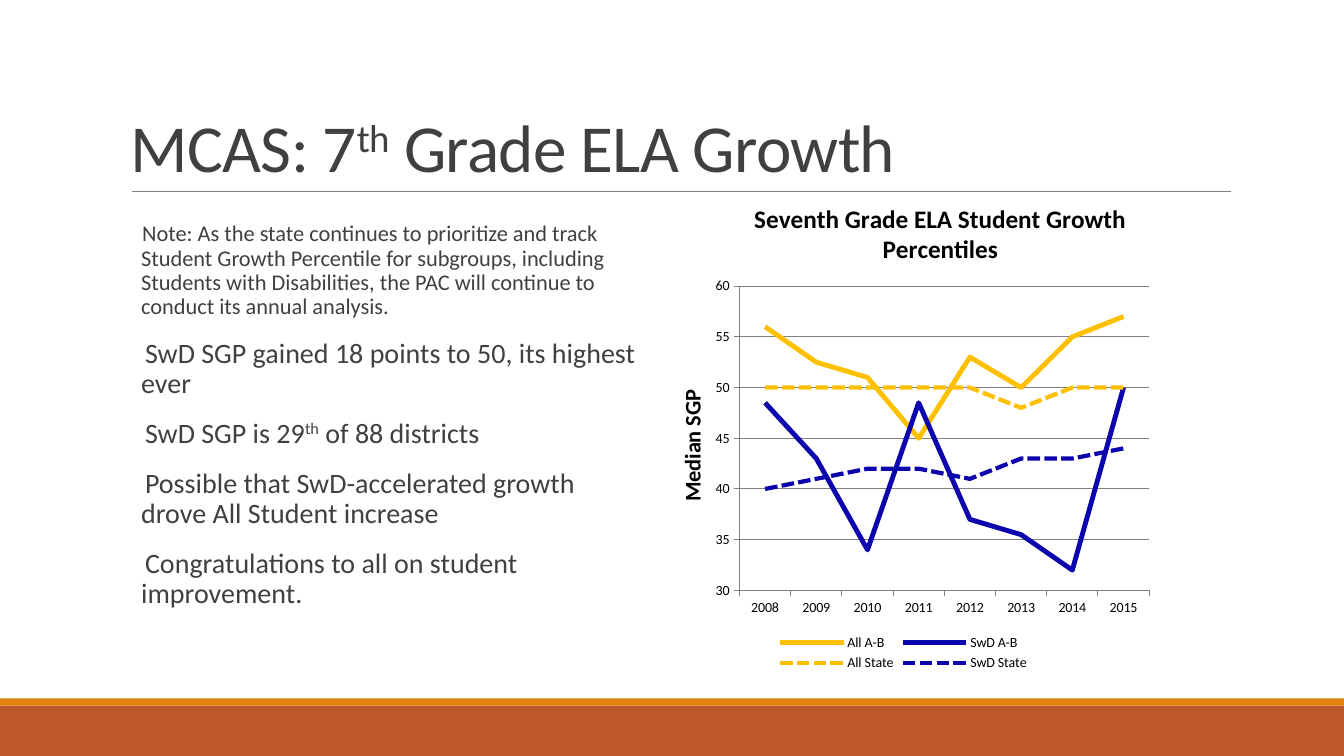
from dataclasses import dataclass
from typing import Any

from lxml.etree import SubElement as Sub
from pptx import Presentation as Deck
from pptx.chart.data import CategoryChartData as Data
from pptx.dml.color import RGBColor as RGB
from pptx.enum.chart import XL_CHART_TYPE as Kind, XL_LEGEND_POSITION as Spot
from pptx.enum.chart import XL_TICK_MARK as Tick
from pptx.enum.dml import MSO_LINE as Dash
from pptx.enum.shapes import MSO_CONNECTOR as Link, MSO_SHAPE as Form
from pptx.enum.text import MSO_ANCHOR as Anchor
from pptx.oxml.ns import qn
from pptx.util import Inches, Pt


@dataclass(frozen=True)
class Theme:
    font: str = "Calibri"
    text: str = "404040"
    black: str = "000000"
    rust: str = "BD582C"
    orange: str = "E48312"
    rule: str = "808080"
    gold: str = "FFC000"
    blue: str = "0C04AC"
    title: int = 48
    note: int = 16
    body: int = 20
    chart: int = 10
    head: int = 18
    axis: int = 16


@dataclass(frozen=True)
class Band:
    top: float
    height: float
    color: str


@dataclass(frozen=True)
class Line:
    name: str
    color: str
    width: float
    dash: Any
    vals: tuple[float, ...]


@dataclass(frozen=True)
class Point:
    size: int
    texts: tuple[str, ...]


LOOK = Theme()
SUPER = "th"
BREAK = "\n"
BANDS = (Band(7, 0.5, LOOK.rust), Band(6.93, 0.07, LOOK.orange))
TITLE = Point(LOOK.title, ("MCAS: 7", SUPER, " Grade ELA Growth"))
POINTS = (
    Point(LOOK.note, ("Note: As the state continues to prioritize and track Student Growth "
                      "Percentile for subgroups, including Students with Disabilities, "
                      "the PAC will continue to conduct its annual analysis.",)),
    Point(LOOK.body, ("SwD SGP gained 18 points to 50, its highest ever",)),
    Point(LOOK.body, ("SwD SGP is 29", SUPER, " of 88 districts")),
    Point(LOOK.body, ("Possible that SwD-accelerated growth ", BREAK,
                      "drove All Student increase")),
    Point(LOOK.body, ("Congratulations to all on student improvement.",)),
)
YEARS = [str(year) for year in range(2008, 2016)]
LINES = (
    Line("All A-B", LOOK.gold, 3.5, Dash.SOLID, (56, 52.5, 51, 45, 53, 50, 55, 57)),
    Line("SwD A-B", LOOK.blue, 3.5, Dash.SOLID, (48.5, 43, 34, 48.5, 37, 35.5, 32, 50)),
    Line("All State", LOOK.gold, 3, Dash.SQUARE_DOT, (50, 50, 50, 50, 50, 48, 50, 50)),
    Line("SwD State", LOOK.blue, 3, Dash.SQUARE_DOT, (40, 41, 42, 42, 41, 43, 43, 44)),
)


def put(item: Any, **vals: Any) -> None:
    for name, val in vals.items():
        setattr(item, name, val)


def style(font: Any, size: int, color: str, **vals: Any) -> None:
    put(font, name=LOOK.font, size=Pt(size), **vals)
    font.color.rgb = RGB.from_string(color)


def stroke(line: Any, color: str, width: float) -> None:
    line.color.rgb = RGB.from_string(color)
    line.width = Pt(width)


def place(node: Any, index: int, **fracs: float) -> None:
    """Fix a chart part at fractions of the chart's size."""
    for old in node.findall(qn("c:layout")):
        node.remove(old)
    lay = Sub(node, qn("c:layout"))
    node.insert(index, lay)
    man = Sub(lay, qn("c:manualLayout"))
    if index == 0:
        Sub(man, qn("c:layoutTarget")).set("val", "inner")
    for key in ("x", "y"):
        Sub(man, qn(f"c:{key}Mode")).set("val", "edge")
    for key, val in fracs.items():
        Sub(man, qn(f"c:{key}")).set("val", str(val))


def add_band(slide: Any, band: Band) -> None:
    box = slide.shapes.add_shape(Form.RECTANGLE, 0, Inches(band.top),
                                 Inches(13.33), Inches(band.height))
    box.shadow.inherit = False
    box.fill.solid()
    box.fill.fore_color.rgb = RGB.from_string(band.color)
    box.line.fill.background()


def add_rule(slide: Any) -> None:
    rule = slide.shapes.add_connector(Link.STRAIGHT, Inches(1.31), Inches(1.9),
                                      Inches(12.21), Inches(1.9))
    stroke(rule.line, LOOK.rule, 0.5)
    Sub(rule._element.spPr, qn("a:effectLst"))


def write(para: Any, point: Point, space: int = 0) -> None:
    for text in point.texts:
        if text == BREAK:
            para.add_line_break()
            continue
        run = para.add_run()
        run.text = text
        style(run.font, point.size, LOOK.text)
        props = run.font._element
        if space:
            props.set("spc", str(space))
        if text == SUPER:
            props.set("baseline", "30000")


def add_title(slide: Any) -> None:
    frame = slide.shapes.add_textbox(Inches(1.2), Inches(0.31),
                                     Inches(11), Inches(1.59)).text_frame
    put(frame, word_wrap=True, vertical_anchor=Anchor.BOTTOM)
    para = frame.paragraphs[0]
    para.line_spacing = 0.85
    write(para, TITLE, -50)


def add_body(slide: Any) -> None:
    frame = slide.shapes.add_textbox(Inches(1.3), Inches(2.16),
                                     Inches(5.12), Inches(4.95)).text_frame
    put(frame, word_wrap=True, margin_left=0, margin_right=0)
    for num, point in enumerate(POINTS):
        para = frame.add_paragraph() if num else frame.paragraphs[0]
        put(para, line_spacing=0.9, space_before=Pt(12), space_after=Pt(2))
        props = para._p.get_or_add_pPr()
        props.set("marL", str(Inches(0.1)))
        props.set("indent", str(Inches(-0.1)))
        Sub(Sub(props, qn("a:buClr")), qn("a:srgbClr")).set("val", LOOK.orange)
        Sub(props, qn("a:buChar")).set("char", " ")
        write(para, point)


def label(title: Any, text: str, size: int, x: float, y: float) -> None:
    title.text_frame.text = text
    style(title.text_frame.paragraphs[0].runs[0].font, size, LOOK.black, bold=True)
    place(title._element, 1, x=x, y=y)


def add_graph(slide: Any) -> None:
    data = Data()
    data.categories = YEARS
    for line in LINES:
        data.add_series(line.name, line.vals)
    chart = slide.shapes.add_chart(Kind.LINE, Inches(6.42), Inches(1.75),
                                   Inches(5.08), Inches(4.95), data).chart
    style(chart.font, LOOK.chart, LOOK.black)
    put(chart, has_title=True, has_legend=True)
    label(chart.chart_title, "Seventh Grade ELA Student Growth Percentiles",
          LOOK.head, 0.2, 0.04)
    for flag in chart.chart_title._element.findall(qn("c:overlay")):
        flag.set("val", "1")
    put(chart.legend, position=Spot.BOTTOM, include_in_layout=False)
    place(chart.legend._element, 1, x=0.25, y=0.91, w=0.5, h=0.09)
    place(chart._chartSpace.chart.plotArea, 0, x=0.18, y=0.22, w=0.8, h=0.61)

    axis = chart.value_axis
    put(axis, minimum_scale=30, maximum_scale=60, major_unit=5,
        has_major_gridlines=True, has_title=True)
    label(axis.axis_title, "Median SGP", LOOK.axis, 0.05, 0.42)
    stroke(axis.major_gridlines.format.line, LOOK.rule, 0.75)
    for item in (axis, chart.category_axis):
        put(item, major_tick_mark=Tick.OUTSIDE, minor_tick_mark=Tick.NONE)
        stroke(item.format.line, LOOK.rule, 0.75)

    plot = chart.plots[0]
    plot.vary_by_categories = False
    for series, line in zip(plot.series, LINES):
        series.smooth = False
        stroke(series.format.line, line.color, line.width)
        series.format.line.dash_style = line.dash


def main() -> None:
    deck = Deck()
    put(deck, slide_width=Inches(13.33), slide_height=Inches(7.5))
    slide = deck.slides.add_slide(deck.slide_layouts[6])
    for band in BANDS:
        add_band(slide, band)
    add_rule(slide)
    add_title(slide)
    add_body(slide)
    add_graph(slide)
    deck.save("out.pptx")


if __name__ == "__main__":
    main()
